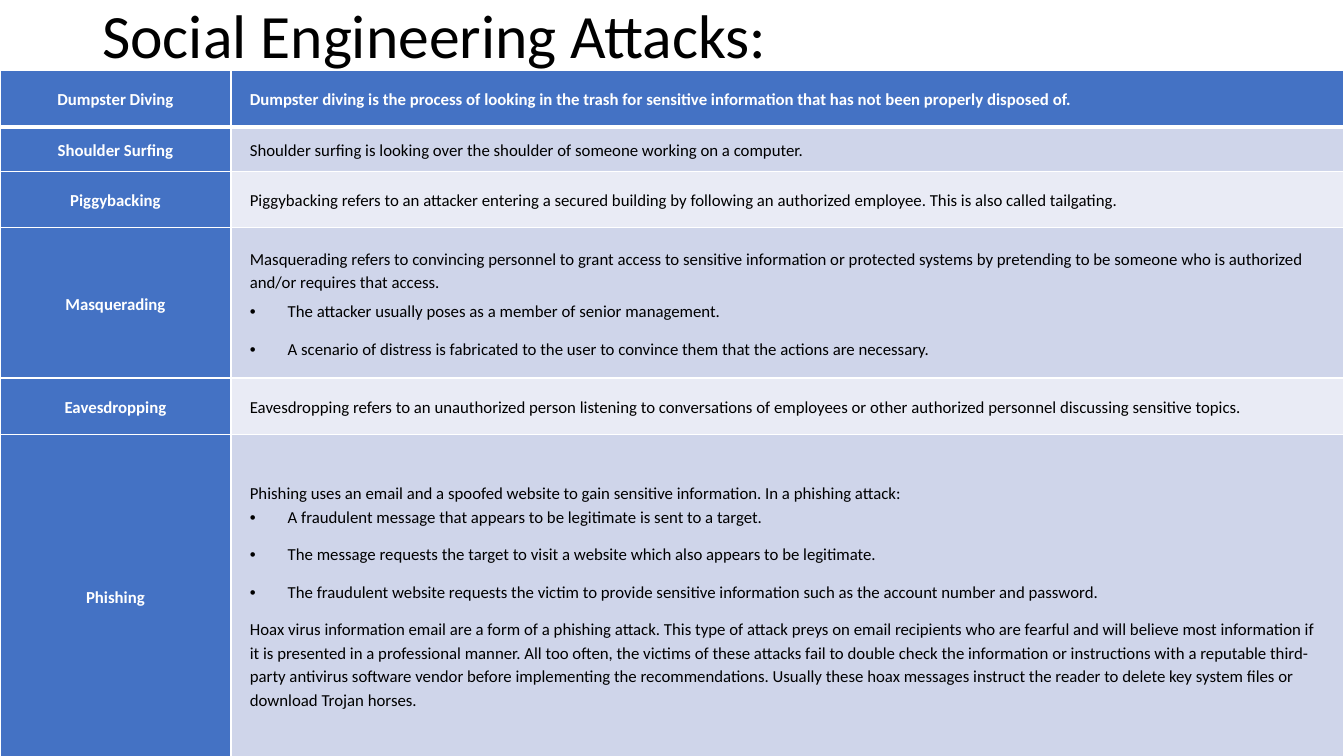
from lxml.etree import SubElement
from pptx import Presentation
from pptx.dml.color import RGBColor
from pptx.enum.text import MSO_ANCHOR, PP_ALIGN
from pptx.oxml import parse_xml
from pptx.oxml.ns import nsdecls, qn
from pptx.util import Pt

EMU_PER_PX = 9525
SLIDE_SIZE = (1280, 720)
TITLE_BOX = (88, 0, 1104, 73)
TABLE_BOX = (0, 67, 1280, 648)
NAME_WIDTH = 220
ROW_HEIGHTS = (54, 36, 54, 143, 54, 307)
CELL_INSET = 18
BULLET_INDENT = 36
TAB_STOP = 48
FONT = "Calibri"
COLORS = {
    "accent": "4472C4",
    "dark_band": "CFD5EA",
    "light_band": "E9EBF5",
    "white": "FFFFFF",
    "black": "000000",
}
BODY, BULLET = "body", "bullet"
INTRO_SPACE, BULLET_SPACE = 3.8, 10

ATTACKS = [
    ("Dumpster Diving", INTRO_SPACE, [
        (BODY, "Dumpster diving is the process of looking in the trash for sensitive "
               "information that has not been properly disposed of."),
    ]),
    ("Shoulder Surfing", INTRO_SPACE, [
        (BODY, "Shoulder surfing is looking over the shoulder of someone working on a computer."),
    ]),
    ("Piggybacking", INTRO_SPACE, [
        (BODY, "Piggybacking refers to an attacker entering a secured building by following "
               "an authorized employee. This is also called tailgating."),
    ]),
    ("Masquerading", INTRO_SPACE, [
        (BODY, "Masquerading refers to convincing personnel to grant access to sensitive "
               "information or protected systems by pretending to be someone who is "
               "authorized and/or requires that access."),
        (BULLET, "The attacker usually poses as a member of senior management."),
        (BULLET, "A scenario of distress is fabricated to the user to convince them that "
                 "the actions are necessary."),
    ]),
    ("Eavesdropping", 0, [
        (BODY, "Eavesdropping refers to an unauthorized person listening to conversations of "
               "employees or other authorized personnel discussing sensitive topics."),
    ]),
    ("Phishing", 0, [
        (BODY, "Phishing uses an email and a spoofed website to gain sensitive information. "
               "In a phishing attack:"),
        (BULLET, "A fraudulent message that appears to be legitimate is sent to a target."),
        (BULLET, "The message requests the target to visit a website which also appears to "
                 "be legitimate."),
        (BULLET, "The fraudulent website requests the victim to provide sensitive information "
                 "such as the account number and password."),
        (BODY, "Hoax virus information email are a form of a phishing attack. This type of "
               "attack preys on email recipients who are fearful and will believe most "
               "information if it is presented in a professional manner. All too often, the "
               "victims of these attacks fail to double check the information or instructions "
               "with a reputable third-party antivirus software vendor before implementing "
               "the recommendations. Usually these hoax messages instruct the reader to "
               "delete key system files or download Trojan horses."),
    ]),
]


def px(length):
    return length * EMU_PER_PX


def set_attributes(target, values):
    for name, value in values.items():
        setattr(target, name, value)


def write_paragraph(paragraph, text, size, color, bold=False, **layout):
    set_attributes(paragraph, layout)
    run = paragraph.add_run()
    run.text = text
    set_attributes(run.font, {"name": FONT, "size": Pt(size), "bold": bold})
    run.font.color.rgb = RGBColor.from_string(COLORS[color])


def add_bullet(paragraph):
    properties = paragraph._p.get_or_add_pPr()
    properties.set("marL", str(px(BULLET_INDENT)))
    properties.set("indent", str(-px(BULLET_INDENT)))
    SubElement(properties, qn("a:buFont"), typeface="Arial")
    SubElement(properties, qn("a:buChar"), char="•")
    tabs = SubElement(properties, qn("a:tabLst"))
    SubElement(tabs, qn("a:tab"), pos=str(px(TAB_STOP)), algn="l")


def set_borders(cell, top, bottom):
    properties = cell._tc.get_or_add_tcPr()
    widths = {"lnL": 1, "lnR": 1, "lnT": top, "lnB": bottom}
    for position, (edge, width) in enumerate(widths.items()):
        properties.insert(position, parse_xml(
            f'<a:{edge} {nsdecls("a")} w="{Pt(width)}"><a:solidFill>'
            f'<a:srgbClr val="{COLORS["white"]}"/></a:solidFill></a:{edge}>'))


def format_cell(cell, row, fill, inset):
    set_attributes(cell, {
        "vertical_anchor": MSO_ANCHOR.MIDDLE,
        "margin_left": px(CELL_INSET),
        "margin_right": px(CELL_INSET),
        "margin_top": px(inset),
        "margin_bottom": px(inset),
    })
    cell.fill.solid()
    cell.fill.fore_color.rgb = RGBColor.from_string(COLORS[fill])
    set_borders(cell, top=3 if row == 1 else 1, bottom=3 if row == 0 else 1)


def fill_name(cell, name, space):
    write_paragraph(cell.text_frame.paragraphs[0], name, 12, "white", True,
                    alignment=PP_ALIGN.CENTER, line_spacing=1.15, space_after=Pt(space))


def fill_description(cell, content, space, color, bold):
    frame = cell.text_frame
    for index, (kind, text) in enumerate(content):
        paragraph = frame.add_paragraph() if index else frame.paragraphs[0]
        if kind == BULLET:
            add_bullet(paragraph)
        after = BULLET_SPACE if kind == BULLET else space
        write_paragraph(paragraph, text, 12, color, bold,
                        line_spacing=1.15, space_after=Pt(after))


def add_title(slide, box, text):
    frame = slide.shapes.add_textbox(*map(px, box)).text_frame
    set_attributes(frame, {"word_wrap": True, "vertical_anchor": MSO_ANCHOR.MIDDLE})
    write_paragraph(frame.paragraphs[0], text, 44, "black", line_spacing=0.9)


def add_attack_table(slide, box):
    table = slide.shapes.add_table(len(ATTACKS), 2, *map(px, box)).table
    for column, width in zip(table.columns, (NAME_WIDTH, box[2] - NAME_WIDTH)):
        column.width = px(width)
    for row, (name, space, content) in enumerate(ATTACKS):
        table.rows[row].height = px(ROW_HEIGHTS[row])
        header = row == 0
        band = "accent" if header else "dark_band" if row % 2 else "light_band"
        name_cell, description_cell = table.cell(row, 0), table.cell(row, 1)
        format_cell(name_cell, row, "accent", 5)
        format_cell(description_cell, row, band, 10)
        fill_name(name_cell, name, space)
        fill_description(description_cell, content, space,
                         "white" if header else "black", header)


def main():
    presentation = Presentation()
    presentation.slide_width, presentation.slide_height = map(px, SLIDE_SIZE)
    slide = presentation.slides.add_slide(presentation.slide_layouts[6])
    add_title(slide, TITLE_BOX, "Social Engineering Attacks:")
    add_attack_table(slide, TABLE_BOX)
    presentation.save("out.pptx")


if __name__ == "__main__":
    main()
